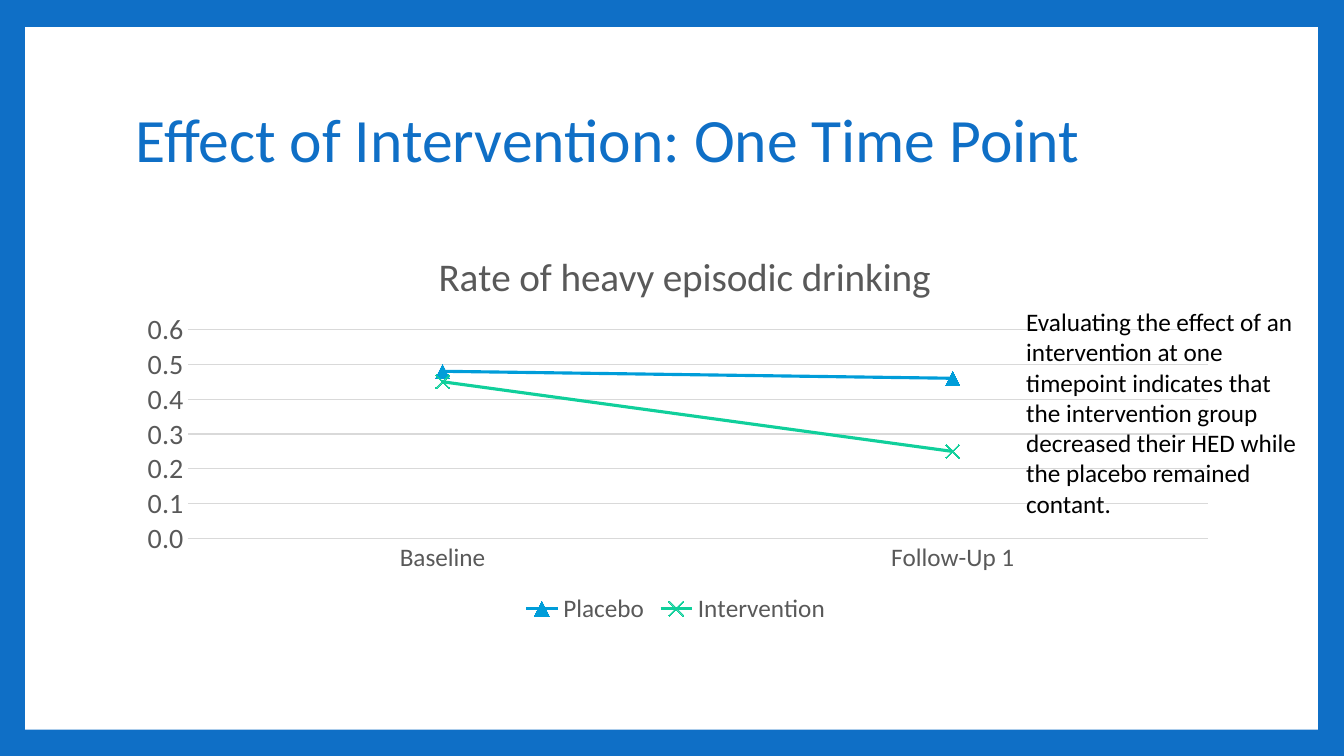
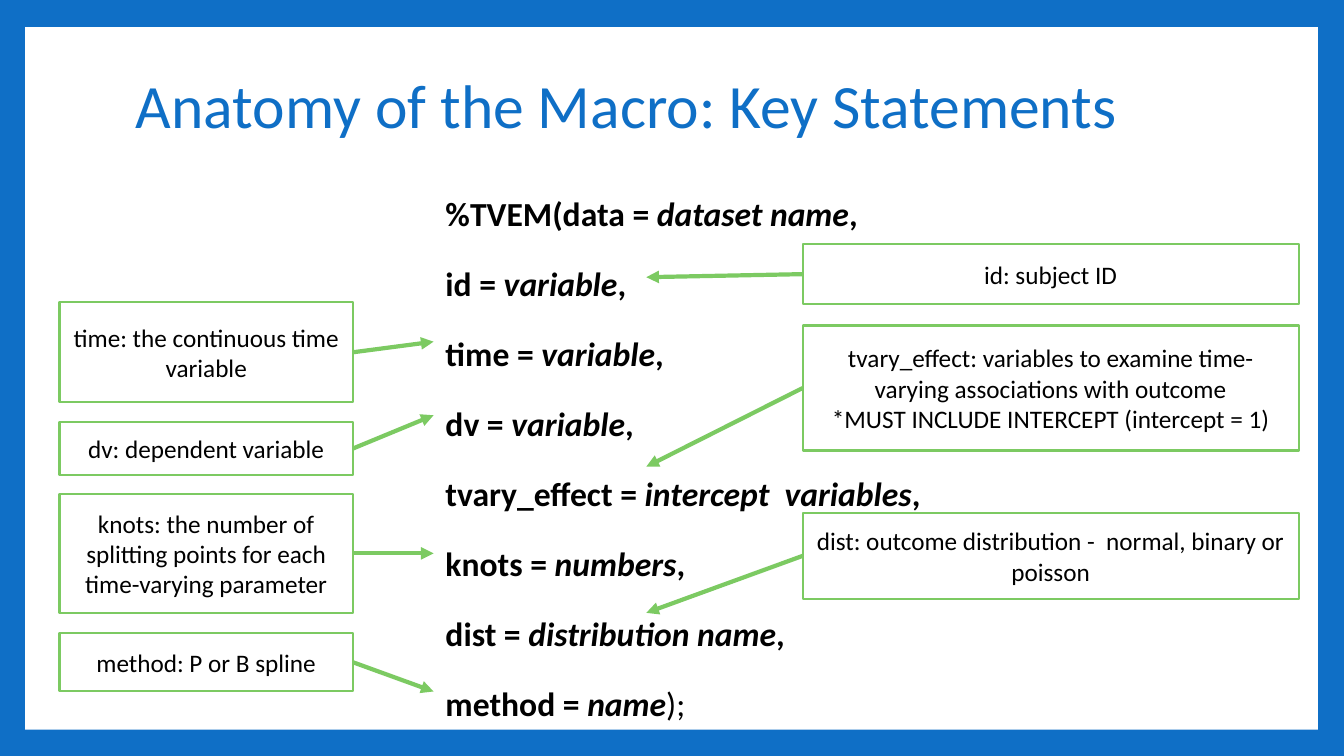
import pptx
import pptx.util
import pptx.chart.data
import pptx.dml.color
import pptx.enum.chart
import pptx.enum.shapes
import pptx.enum.text
import pptx.oxml
import pptx.oxml.ns

Inches, Pt = pptx.util.Inches, pptx.util.Pt
MARKER = pptx.enum.chart.XL_MARKER_STYLE
ALIGN = pptx.enum.text.PP_ALIGN
ANCHOR = pptx.enum.text.MSO_ANCHOR

FONT = "Calibri"
COLORS = {
    "blue": "0F6FC6", "white": "FFFFFF", "black": "000000", "gray": "595959",
    "grid": "D9D9D9", "green": "7CCA62", "placebo": "009DD9", "intervention": "10CF9B",
}

TREND_TITLE = "Effect of Intervention: One Time Point"
CHART_TITLE = "Rate of heavy episodic drinking"
CATEGORIES = ["Baseline", "Follow-Up 1"]
SERIES = [
    ("Placebo", (0.48, 0.46), "placebo", MARKER.TRIANGLE),
    ("Intervention", (0.45, 0.25), "intervention", MARKER.X),
]
TREND_NOTE = (
    "Evaluating the effect of an intervention at one timepoint indicates that the "
    "intervention group decreased their HED while the placebo remained contant."
)

MACRO_TITLE = "Anatomy of the Macro: Key Statements"
STATEMENTS = [
    ("%TVEM(data = ", "dataset name", ","),
    ("id = ", "variable", ","),
    ("time = ", "variable", ","),
    ("dv = ", "variable", ","),
    ("tvary_effect = ", "intercept  variables", ","),
    ("knots = ", "numbers", ","),
    ("dist = ", "distribution name", ","),
    ("method = ", "name", ");"),
]
SIDES = {
    "left": {"x": 0.59, "width": 2.91, "start": 3.5, "tip": 4.3},
    "right": {"x": 7.96, "width": 4.92, "start": 7.96, "tip": 6.41},
}
CALLOUTS = [
    ("right", 2.42, 0.6, 2.75, ["id: subject ID"]),
    ("right", 3.23, 1.24, 4.63, [
        "tvary_effect: variables to examine time-varying associations with outcome",
        "*MUST INCLUDE INTERCEPT (intercept = 1)",
    ]),
    ("right", 5.09, 0.85, 6.08, ["dist: outcome distribution -  normal, binary or poisson"]),
    ("left", 3, 0.99, 3.39, ["time: the continuous time variable"]),
    ("left", 4.19, 0.52, 4.12, ["dv: dependent variable"]),
    ("left", 4.9, 1.18, 5.49, ["knots: the number of splitting points for each time-varying parameter"]),
    ("left", 6.28, 0.58, 6.86, ["method: P or B spline"]),
]


def rgb(name):
    return pptx.dml.color.RGBColor.from_string(COLORS[name])


def style(font, size, color="black", **values):
    for key, value in {"name": FONT, "size": Pt(size), "bold": False, **values}.items():
        setattr(font, key, value)
    font.color.rgb = rgb(color)


def set_line(line, color, width):
    line.color.rgb = rgb(color)
    line.width = Pt(width)


def add_rect(s, box, line=None):
    sp = s.shapes.add_shape(pptx.enum.shapes.MSO_SHAPE.RECTANGLE, *map(Inches, box))
    sp.shadow.inherit = False
    sp.fill.solid()
    sp.fill.fore_color.rgb = rgb("white")
    if line:
        set_line(sp.line, line, 1.5)
    else:
        sp.line.fill.background()
    return sp


def write(tf, paragraphs, spacing=None, align=ALIGN.LEFT, anchor=ANCHOR.TOP):
    tf.word_wrap = True
    tf.vertical_anchor = anchor
    for i, runs in enumerate(paragraphs):
        p = tf.paragraphs[0] if i == 0 else tf.add_paragraph()
        p.alignment = align
        if spacing:
            p.line_spacing = spacing
        for text, values in runs:
            r = p.add_run()
            r.text = text
            style(r.font, **values)


def add_text(s, box, paragraphs, **layout):
    write(s.shapes.add_textbox(*map(Inches, box)).text_frame, paragraphs, **layout)


def add_arrow(s, start, end):
    line = s.shapes.add_connector(
        pptx.enum.shapes.MSO_CONNECTOR.STRAIGHT, *map(Inches, start + end))
    set_line(line.line, "green", 3)
    line.line._get_or_add_ln().append(pptx.oxml.parse_xml(
        f'<a:tailEnd {pptx.oxml.ns.nsdecls("a")} type="triangle"/>'))
    line._element.spPr.append(pptx.oxml.parse_xml(
        f'<a:effectLst {pptx.oxml.ns.nsdecls("a")}/>'))


def add_slide(prs, title, title_top):
    s = prs.slides.add_slide(prs.slide_layouts[6])
    s.background.fill.solid()
    s.background.fill.fore_color.rgb = rgb("blue")
    add_rect(s, (0.25, 0.27, 12.82, 6.97))
    add_text(s, (1.25, title_top, 10.8, 1.48), [[(title, {"size": 44, "color": "blue"})]],
             spacing=0.9, anchor=ANCHOR.MIDDLE)
    return s


def place(parent, before, target="", **fractions):
    modes = "".join(f'<c:{k}Mode val="edge"/>' for k in "xy")
    values = "".join(f'<c:{k} val="{v}"/>' for k, v in fractions.items())
    for old in parent.findall(pptx.oxml.ns.qn("c:layout")):
        parent.remove(old)
    layout = pptx.oxml.parse_xml(
        f'<c:layout {pptx.oxml.ns.nsdecls("c")}><c:manualLayout>{target}{modes}{values}'
        '</c:manualLayout></c:layout>')
    parent.insert(before, layout)


def add_trend_chart(s):
    data = pptx.chart.data.CategoryChartData()
    data.categories = CATEGORIES
    for name, values, *_ in SERIES:
        data.add_series(name, values)
    chart = s.shapes.add_chart(
        pptx.enum.chart.XL_CHART_TYPE.LINE_MARKERS,
        *map(Inches, (1.2, 2.17, 11, 4.07)), data).chart
    style(chart.font, 10)

    write(chart.chart_title.text_frame, [[(CHART_TITLE, {"size": 28, "color": "gray"})]])
    chart.chart_title.include_in_layout = False
    place(chart.chart_title._element, 1, x=0.28, y=0.06)
    place(chart._chartSpace.chart.plotArea, 0, '<c:layoutTarget val="inner"/>',
          x=0.06, y=0.27, w=0.92, h=0.51)

    chart.has_legend = True
    chart.legend.position = pptx.enum.chart.XL_LEGEND_POSITION.BOTTOM
    chart.legend.include_in_layout = False
    style(chart.legend.font, 18, "gray")

    for axis, size in ((chart.category_axis, 18), (chart.value_axis, 20)):
        axis.major_tick_mark = pptx.enum.chart.XL_TICK_MARK.NONE
        style(axis.tick_labels.font, size, "gray")
    set_line(chart.category_axis.format.line, "grid", 0.75)
    axis = chart.value_axis
    axis.format.line.fill.background()
    for key, value in {"minimum_scale": 0, "maximum_scale": 0.6, "major_unit": 0.1}.items():
        setattr(axis, key, value)
    set_line(axis.major_gridlines.format.line, "grid", 0.75)
    axis.tick_labels.number_format = "#,##0.0"
    axis.tick_labels.number_format_is_linked = False

    chart.plots[0].vary_by_categories = False
    for series, (_, _, color, marker) in zip(chart.plots[0].series, SERIES):
        series.smooth = False
        set_line(series.format.line, color, 2.25)
        series.marker.style = marker
        series.marker.size = 10
        set_line(series.marker.format.line, color, 0.75)
        if marker == MARKER.X:
            series.marker.format.fill.background()
        else:
            series.marker.format.fill.solid()
            series.marker.format.fill.fore_color.rgb = rgb(color)


def build_trend(prs):
    s = add_slide(prs, TREND_TITLE, 0.67)
    add_trend_chart(s)
    add_text(s, (10.08, 2.99, 2.92, 2.22), [[(TREND_NOTE, {"size": 18})]])


def build_macro(prs):
    s = add_slide(prs, MACRO_TITLE, 0.34)
    code = [
        [(key, {"size": 24, "bold": True}),
         (value, {"size": 24, "bold": True, "italic": True}),
         (end, {"size": 24, "bold": end == ","})]
        for key, value, end in STATEMENTS
    ]
    add_text(s, (4.32, 1.57, 5.32, 5.62), code, spacing=Pt(50))
    for side, top, height, tip_y, lines in CALLOUTS:
        g = SIDES[side]
        sp = add_rect(s, (g["x"], top, g["width"], height), "green")
        write(sp.text_frame, [[(line, {"size": 18})] for line in lines],
              align=ALIGN.CENTER, anchor=ANCHOR.MIDDLE)
        add_arrow(s, (g["start"], top + height / 2), (g["tip"], tip_y))


def main():
    prs = pptx.Presentation()
    prs.slide_width, prs.slide_height = Inches(13.33), Inches(7.5)
    build_trend(prs)
    build_macro(prs)
    prs.save("out.pptx")


if __name__ == "__main__":
    main()
